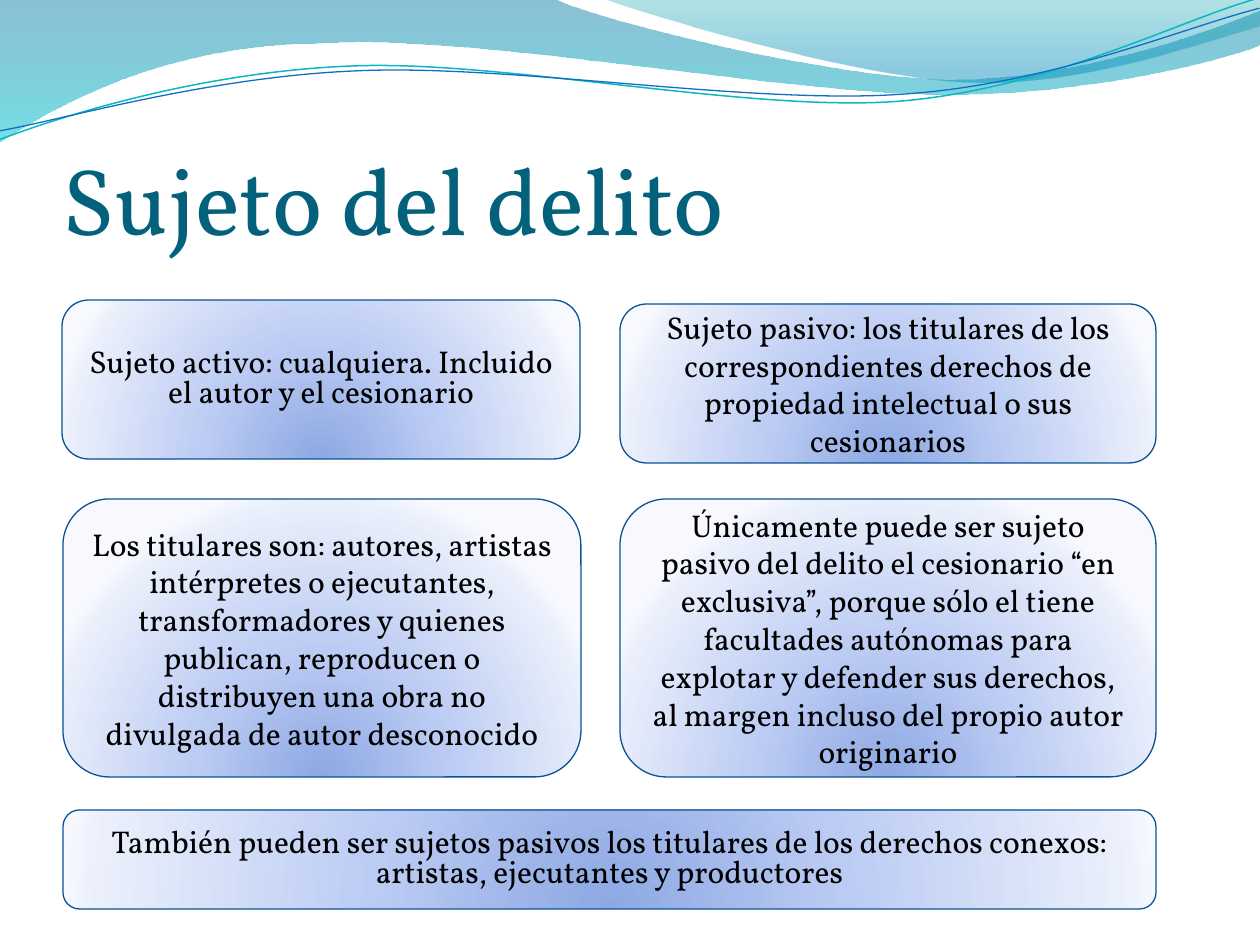
from lxml import etree
from pptx import Presentation
from pptx.dml.color import RGBColor
from pptx.enum.shapes import MSO_SHAPE
from pptx.enum.text import MSO_ANCHOR, PP_ALIGN
from pptx.oxml.ns import qn
from pptx.util import Pt

ROUNDED = MSO_SHAPE.ROUNDED_RECTANGLE
MIDDLE, BOTTOM = MSO_ANCHOR.MIDDLE, MSO_ANCHOR.BOTTOM
LEFT, CENTER = PP_ALIGN.LEFT, PP_ALIGN.CENTER
EMU_PER_PX = 914400 / 126
WIDTH, HEIGHT = 1260, 945
WAVE_ANGLE = 357.3
FONT = "Vollkorn"

BANDS = [
    ([(0, -1), (554, -1), (600, 21, 837, 79, 955, 79),
      (1074, 79, 1207, 33, 1260, 11), (1261, 45),
      (1239, 55, 1096, 96, 940, 94), (784, 94, 481, 35, 324, 43),
      (163, 44, 58, 105, -1, 142)],
     [(0, "0074A1", 45), (100, "00C6CF", 55)]),
    ([(604, -1), (641, 14, 859, 78, 969, 82),
      (1079, 87, 1211, 40, 1260, 26), (1260, 0)],
     [(0, "00A1A9", 30), (80, "008BBF", 45)]),
]
WAVES = [
    ([(-3, 110), (58, 90, 199, 52, 350, 53), (499, 53, 745, 118, 896, 114),
      (1049, 109, 1184, 45, 1261, 28)], "0AB8BF", 0.85),
    ([(-2, 101), (57, 94, 207, 57, 357, 58), (509, 58, 750, 111, 902, 107),
      (1052, 104, 1187, 53, 1262, 38)], "0F6FC6", 0.75),
]
CARD_STOPS = [(0, "8DA8E3", 100), (43, "BBCBF3", 100),
              (93, "EAEFFB", 100), (100, "F7F9FF", 100)]
CARDS = [
    ((0, 0, 518, 159), 0.8,
     "Sujeto activo: cualquiera. Incluido el autor y el cesionario"),
    ((558, 4, 536, 159), 1,
     "Sujeto pasivo: los titulares de los correspondientes derechos de "
     "propiedad intelectual o sus cesionarios"),
    ((1, 199, 518, 278), 1,
     "Los titulares son: autores, artistas intérpretes o ejecutantes, "
     "transformadores y quienes publican, reproducen o distribuyen una obra "
     "no divulgada de autor desconocido"),
    ((558, 199, 536, 278), 1,
     "Únicamente puede ser sujeto pasivo del delito el cesionario “en "
     "exclusiva”, porque sólo el tiene facultades autónomas para explotar y "
     "defender sus derechos, al margen incluso del propio autor originario"),
    ((1, 510, 1093, 99), 0.8,
     "También pueden ser sujetos pasivos los titulares de los derechos "
     "conexos: artistas, ejecutantes y productores"),
]


def px(length):
    return round(length * EMU_PER_PX)


def color(hex_value):
    return RGBColor.from_string(hex_value)


def set_line(shape, hex_value, points):
    shape.line.color.rgb = color(hex_value)
    shape.line.width = Pt(points)


def set_gradient(shape, stops, radial=False):
    shape.fill.solid()
    gradient = etree.Element(qn("a:gradFill"), rotWithShape="1")
    stop_list = etree.SubElement(gradient, qn("a:gsLst"))
    for position, hex_value, opacity in stops:
        stop = etree.SubElement(stop_list, qn("a:gs"), pos=str(position * 1000))
        tint = etree.SubElement(stop, qn("a:srgbClr"), val=str(color(hex_value)))
        if opacity < 100:
            etree.SubElement(tint, qn("a:alpha"), val=str(opacity * 1000))
    if radial:
        circle = etree.SubElement(gradient, qn("a:path"), path="circle")
        etree.SubElement(circle, qn("a:fillToRect"),
                         l="50000", t="130000", r="50000", b="-30000")
    else:
        etree.SubElement(gradient, qn("a:lin"), ang="5400000", scaled="1")
    properties = shape._element.spPr
    properties.replace(properties.find(qn("a:solidFill")), gradient)


def bend(shape, segments):
    lines = iter(list(shape._element.iter(qn("a:lnTo"))))
    for segment in segments[1:]:
        first = next(lines)
        if len(segment) == 2:
            continue
        curve = etree.Element(qn("a:cubicBezTo"))
        first.addprevious(curve)
        for line in (first, next(lines), next(lines)):
            curve.append(line[0])
            line.getparent().remove(line)


def add_outline(page, box, segments, closed):
    points = [(px(box[0] + segment[i]), px(box[1] + segment[i + 1]))
              for segment in segments for i in range(0, len(segment), 2)]
    builder = page.shapes.build_freeform(*points[0], scale=1.0)
    builder.add_line_segments(points[1:], close=closed)
    shape = builder.convert_to_shape()
    bend(shape, segments)
    shape.shadow.inherit = False
    return shape


def write(shape, text, size, hex_value, anchor, align, spacing=1):
    frame = shape.text_frame
    frame.word_wrap = True
    frame.vertical_anchor = anchor
    para = frame.paragraphs[0]
    para.text = text
    para.alignment = align
    if spacing != 1:
        para.line_spacing = spacing
    para.font.name = FONT
    para.font.size = Pt(size)
    para.font.color.rgb = color(hex_value)


def add_header(page, box):
    for segments, stops in BANDS:
        band = add_outline(page, box, segments, True)
        set_gradient(band, stops)
        band.line.fill.background()
    for segments, hex_value, points in WAVES:
        wave = add_outline(page, box, segments, False)
        wave.rotation = WAVE_ANGLE
        wave.fill.background()
        set_line(wave, hex_value, points)


def add_title(page, box):
    title = page.shapes.add_textbox(*map(px, box))
    frame = title.text_frame
    frame.margin_left = frame.margin_right = frame.margin_bottom = 0
    write(title, "Sujeto del delito", 54, "04617B", BOTTOM, LEFT)


def add_cards(page, box):
    for (left, top, width, height), spacing, text in CARDS:
        card = page.shapes.add_shape(ROUNDED, px(box[0] + left), px(box[1] + top),
                                     px(width), px(height))
        card.shadow.inherit = False
        set_gradient(card, CARD_STOPS, radial=True)
        set_line(card, "095295", 0.75)
        write(card, text, 18, "000000", MIDDLE, CENTER, spacing)


def main():
    deck = Presentation()
    deck.slide_width, deck.slide_height = px(WIDTH), px(HEIGHT)
    page = deck.slides.add_slide(deck.slide_layouts[6])
    add_header(page, (0, 0, WIDTH, 142))
    add_title(page, (63, 97, 1144, 157))
    add_cards(page, (62, 300, 1094, 609))
    deck.save("out.pptx")


if __name__ == "__main__":
    main()
